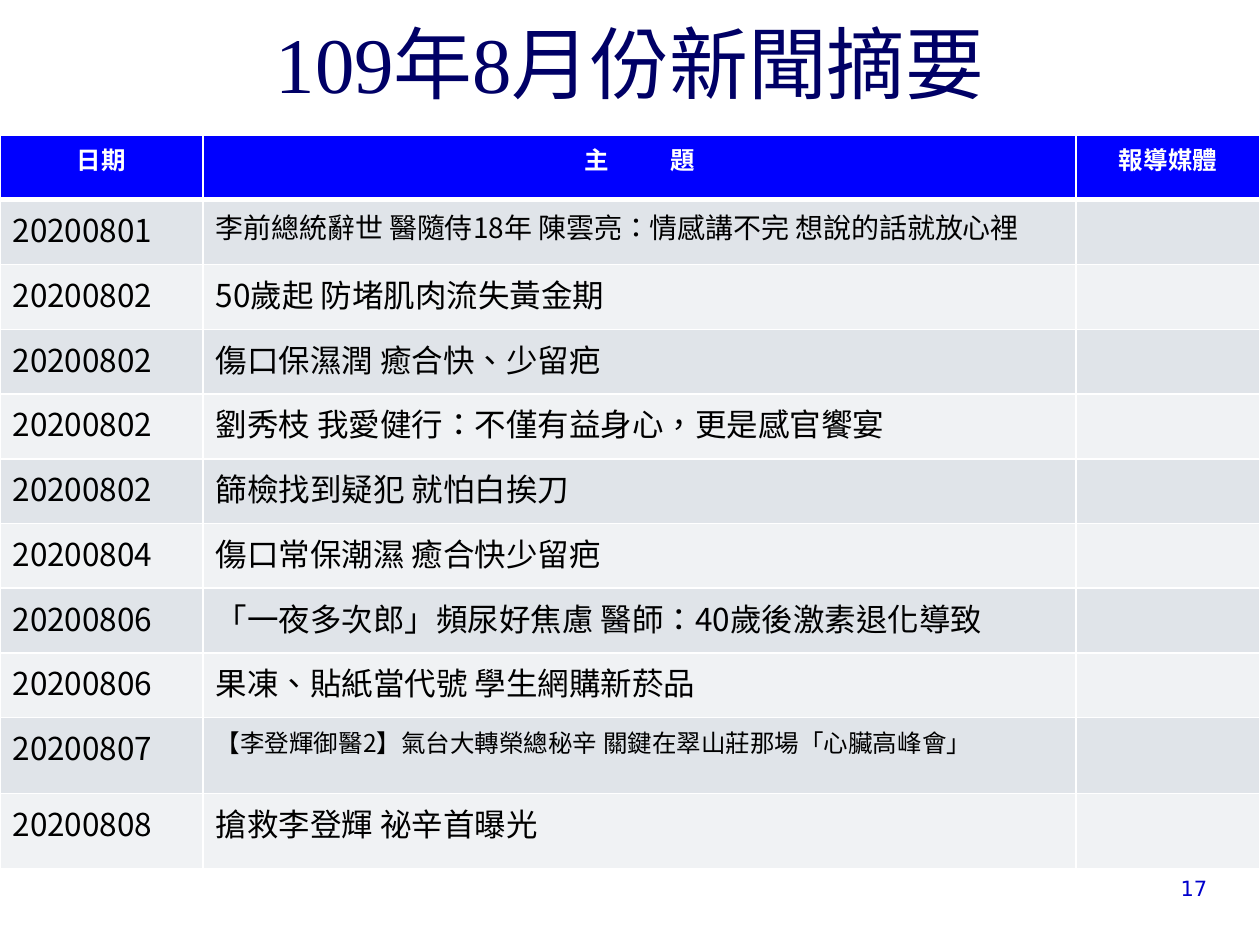
"""Build the monthly news summary slide."""
import lxml.etree
import pptx
import pptx.dml.color
import pptx.enum.text
import pptx.oxml.ns
import pptx.util

COLORS = {
    "title": "000066", "header": "0000FF", "white": "FFFFFF", "text": "000000",
    "odd": "E0E4E9", "even": "F0F2F4", "number": "0000CC",
}
CJK_FONT = "Noto Sans CJK SC"
CENTER = pptx.enum.text.PP_ALIGN.CENTER
LEFT = pptx.enum.text.PP_ALIGN.LEFT
RIGHT = pptx.enum.text.PP_ALIGN.RIGHT
HEADERS = [[("日期", 0)], [("主", 32), (" 題", 0)], [("報導媒體", 0)]]
NEWS = [
    ("20200801", "李前總統辭世 醫隨侍18年 陳雲亮：情感講不完 想說的話就放心裡", 16),
    ("20200802", "50歲起 防堵肌肉流失黃金期", 18),
    ("20200802", "傷口保濕潤 癒合快、少留疤", 18),
    ("20200802", "劉秀枝 我愛健行：不僅有益身心，更是感官饗宴", 18),
    ("20200802", "篩檢找到疑犯 就怕白挨刀", 18),
    ("20200804", "傷口常保潮濕 癒合快少留疤", 18),
    ("20200806", "「一夜多次郎」頻尿好焦慮 醫師：40歲後激素退化導致", 18),
    ("20200806", "果凍、貼紙當代號 學生網購新菸品", 18),
    ("20200807", "【李登輝御醫2】氣台大轉榮總秘辛 關鍵在翠山莊那場「心臟高峰會」", 14),
    ("20200808", "搶救李登輝 祕辛首曝光", 18),
]
COLUMN_WIDTHS = [116, 499, 105]
ROW_HEIGHTS = [37] * 9 + [43.2] * 2


class SlideBuilder:
    """Hold the slide and its style, and add each kind of element."""

    def __init__(self, presentation):
        self.slide = presentation.slides.add_slide(presentation.slide_layouts[5])

    def color(self, name):
        return pptx.dml.color.RGBColor.from_string(COLORS[name])

    def place(self, shape, left, top, width, height):
        shape.left, shape.top = pptx.util.Pt(left), pptx.util.Pt(top)
        shape.width, shape.height = pptx.util.Pt(width), pptx.util.Pt(height)

    def add_text(self, frame, runs, size, color, alignment=LEFT, font=CJK_FONT, bold=False):
        paragraph = frame.paragraphs[0]
        paragraph.alignment = alignment
        for text, spacing in runs:
            run = paragraph.add_run()
            run.text = text
            run.font.size = pptx.util.Pt(size)
            run.font.bold = bold
            run.font.name = font
            run.font.color.rgb = self.color(color)
            properties = run._r.get_or_add_rPr()
            properties.set("lang", "zh-TW")
            if spacing:
                properties.set("spc", str(spacing * 100))
            east_asian = lxml.etree.SubElement(properties, pptx.oxml.ns.qn("a:ea"))
            east_asian.set("typeface", CJK_FONT)

    def title(self, text):
        shape = self.slide.shapes.title
        self.place(shape, 45, 24.5, 630, 41.8)
        frame = shape.text_frame
        frame.word_wrap = True
        frame.auto_size = pptx.enum.text.MSO_AUTO_SIZE.NONE
        frame.vertical_anchor = pptx.enum.text.MSO_ANCHOR.BOTTOM
        self.add_text(frame, [(text, 0)], 45, "title", CENTER, "Times New Roman")

    def page_number(self, text):
        shape = self.slide.shapes.add_textbox(0, 0, 0, 0)
        self.place(shape, 643.7, 496.8, 53.3, 21.6)
        shape.text_frame.word_wrap = True
        self.add_text(shape.text_frame, [(text, 0)], 12, "number", RIGHT, "DejaVu Sans")

    def border(self, cell, side, width):
        properties = cell._tc.get_or_add_tcPr()
        line = lxml.etree.SubElement(properties, pptx.oxml.ns.qn("a:" + side))
        line.set("w", str(pptx.util.Pt(width)))
        fill = lxml.etree.SubElement(line, pptx.oxml.ns.qn("a:solidFill"))
        color = lxml.etree.SubElement(fill, pptx.oxml.ns.qn("a:srgbClr"))
        color.set("val", COLORS["white"])

    def style_cell(self, cell, row):
        self.border(cell, "lnL", 1)
        self.border(cell, "lnR", 1)
        self.border(cell, "lnT", 3 if row == 1 else 1)
        self.border(cell, "lnB", 3 if row == 0 else 1)
        cell.fill.solid()
        band = "odd" if row % 2 else "even"
        cell.fill.fore_color.rgb = self.color(band if row else "header")

    def news_table(self):
        shape = self.slide.shapes.add_table(
            len(ROW_HEIGHTS), len(COLUMN_WIDTHS), 0, pptx.util.Pt(77.2),
            pptx.util.Pt(sum(COLUMN_WIDTHS)), pptx.util.Pt(sum(ROW_HEIGHTS)))
        table = shape.table
        for column, width in zip(table.columns, COLUMN_WIDTHS):
            column.width = pptx.util.Pt(width)
        for index, height in enumerate(ROW_HEIGHTS):
            table.rows[index].height = pptx.util.Pt(height)
            for cell in table.rows[index].cells:
                self.style_cell(cell, index)
        for index, runs in enumerate(HEADERS):
            self.add_text(table.cell(0, index).text_frame, runs, 14, "white", CENTER, bold=True)
        for index, (date, headline, size) in enumerate(NEWS, start=1):
            self.add_text(table.cell(index, 0).text_frame, [(date, 0)], 18, "text")
            self.add_text(table.cell(index, 1).text_frame, [(headline, 0)], size, "text")


def main():
    presentation = pptx.Presentation()
    presentation.slide_width = pptx.util.Pt(720)
    presentation.slide_height = pptx.util.Pt(540)
    builder = SlideBuilder(presentation)
    builder.title("109年8月份新聞摘要")
    builder.news_table()
    builder.page_number("17")
    presentation.save("out.pptx")


if __name__ == "__main__":
    main()
